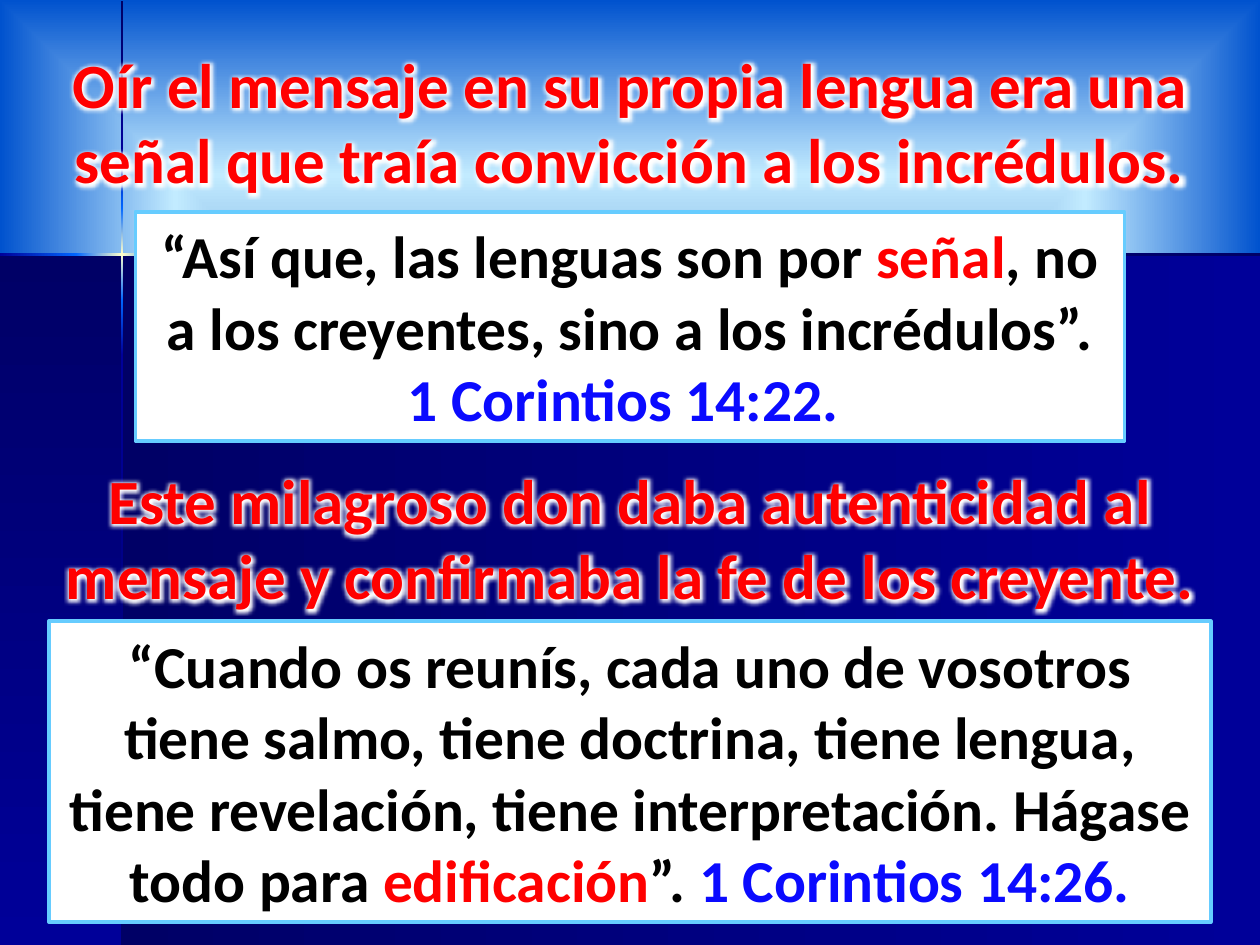
from lxml import etree
from pptx import Presentation
from pptx import util as u
from pptx.dml.color import RGBColor
from pptx.enum import shapes, text
from pptx.oxml import ns

WIDTH, HEIGHT = 25.4, 19.05
CROSS_X, CROSS_Y, BAR = 2.46, 5.13, 0.05
NAVY, DARK, BRIGHT, CREAM = "000066", "000099", "0066FF", "FFFFCC"
RED, BLACK, BLUE, WHITE, SKY = "FF0000", "000000", "0A0AFF", "FFFFFF", "66CCFF"

BACKGROUND = [(0, "0045AD"), (63, "C2EBFF"), (100, "0052CE"), (100, "0040A2")]
PANELS = [
    (CROSS_X, WIDTH, 0),
    (0, CROSS_X, 90),
]
VERTICAL_BARS = [
    (0.02, 3.1, (NAVY, DARK)),
    (7.16, HEIGHT, (DARK, NAVY)),
    (6.05, 7.16, (BRIGHT, DARK)),
    (3.1, 4.19, (DARK, BRIGHT)),
    (4.19, 6.05, (BRIGHT, CREAM, BRIGHT)),
]
HORIZONTAL_BARS = [
    (4.5, WIDTH, (DARK, NAVY)),
    (0, 1.55, (DARK, BRIGHT)),
    (1.53, 3.38, (BRIGHT, CREAM, BRIGHT)),
]
HEADINGS = [
    (0.79, "Oír el mensaje en su propia lengua era una señal que traía convicción a los incrédulos."),
    (9.17, "Este milagroso don daba autenticidad al mensaje y confirmaba la fe de los creyente."),
]
QUOTES = [
    (4.27, 19.94, 4.62, [
        ("“Así que, las lenguas son por ", BLACK),
        ("señal", RED),
        (", no a los creyentes, sino a los incrédulos”. ", BLACK),
        ("1 Corintios 14:22. ", BLUE),
    ]),
    (12.52, 23.42, 6.07, [
        ("“Cuando os reunís, cada uno de vosotros tiene salmo, tiene doctrina, tiene lengua, "
         "tiene revelación, tiene interpretación. Hágase todo para ", BLACK),
        ("edificación", RED),
        ("”. ", BLACK),
        ("1 Corintios 14:26.", BLUE),
    ]),
]
HEADING_WIDTH, HEADING_HEIGHT = 23.47, 3.33


def color(value):
    return RGBColor.from_string(value)


def add(parent, tag, **attributes):
    return etree.SubElement(parent, ns.qn(tag), attributes)


def set_gradient(fill, owner, stops, angle=None):
    fill.gradient()
    gradient = next(owner.iter(ns.qn("a:gradFill")))
    for child in list(gradient):
        gradient.remove(child)
    stop_list = add(gradient, "a:gsLst")
    for position, value in stops:
        stop = add(stop_list, "a:gs", pos=str(position * 1000))
        add(stop, "a:srgbClr", val=value)
    if angle is None:
        center = add(gradient, "a:path", path="shape")
        add(center, "a:fillToRect", l="50000", t="50000", r="50000", b="50000")
    else:
        add(gradient, "a:lin", ang=str(angle * 60000), scaled="0")


def add_rectangle(slide, left, top, width, height):
    box = slide.shapes.add_shape(shapes.MSO_SHAPE.RECTANGLE, *map(u.Cm, (left, top, width, height)))
    box.shadow.inherit = False
    return box


def add_band(slide, left, top, width, height, colors, angle):
    band = add_rectangle(slide, left, top, width, height)
    band.line.fill.background()
    stops = [(100 * i // (len(colors) - 1), value) for i, value in enumerate(colors)]
    set_gradient(band.fill, band._element.spPr, stops, angle)


def write(box, spans, size, glow=False):
    frame = box.text_frame
    frame.word_wrap = True
    frame.auto_size = text.MSO_AUTO_SIZE.SHAPE_TO_FIT_TEXT
    para = frame.paragraphs[0]
    para.alignment = text.PP_ALIGN.CENTER
    for words, value in spans:
        span = para.add_run()
        span.text = words
        font = span.font
        font.name, font.size, font.bold = "Calibri", u.Pt(size), True
        font.color.rgb = color(value)
        properties = span._r.get_or_add_rPr()
        outline = add(properties, "a:ln", w=str(u.Pt(0.75)))
        add(add(outline, "a:solidFill"), "a:srgbClr", val=value)
        properties.insert(0, outline)
        if glow:
            effects = add(properties, "a:effectLst")
            add(add(effects, "a:glow", rad=str(u.Pt(8))), "a:srgbClr", val=WHITE)
            properties.insert(2, effects)


def add_heading(slide, top, words):
    left = (WIDTH - HEADING_WIDTH) / 2
    box = slide.shapes.add_textbox(*map(u.Cm, (left, top, HEADING_WIDTH, HEADING_HEIGHT)))
    write(box, [(words, RED)], 36, glow=True)


def add_quote(slide, top, width, height, spans):
    box = add_rectangle(slide, (WIDTH - width) / 2, top, width, height)
    box.fill.solid()
    box.fill.fore_color.rgb = color(WHITE)
    box.line.color.rgb = color(SKY)
    box.line.width = u.Pt(2)
    box.text_frame.vertical_anchor = text.MSO_ANCHOR.MIDDLE
    write(box, spans, 34)


def main():
    """Build the slide about the gift of tongues."""
    deck = Presentation()
    deck.slide_width, deck.slide_height = u.Cm(WIDTH), u.Cm(HEIGHT)
    slide = deck.slides.add_slide(deck.slide_layouts[6])
    set_gradient(slide.background.fill, slide._element, BACKGROUND)
    for start, end, angle in PANELS:
        add_band(slide, start, CROSS_Y, end - start, HEIGHT - CROSS_Y, (NAVY, DARK), angle)
    for start, end, colors in VERTICAL_BARS:
        add_band(slide, CROSS_X - BAR / 2, start, BAR, end - start, colors, 90)
    for start, end, colors in HORIZONTAL_BARS:
        add_band(slide, start, CROSS_Y - BAR / 2, end - start, BAR, colors, 0)
    for quote in QUOTES:
        add_quote(slide, *quote)
    for heading in HEADINGS:
        add_heading(slide, *heading)
    deck.save("out.pptx")


if __name__ == "__main__":
    main()
